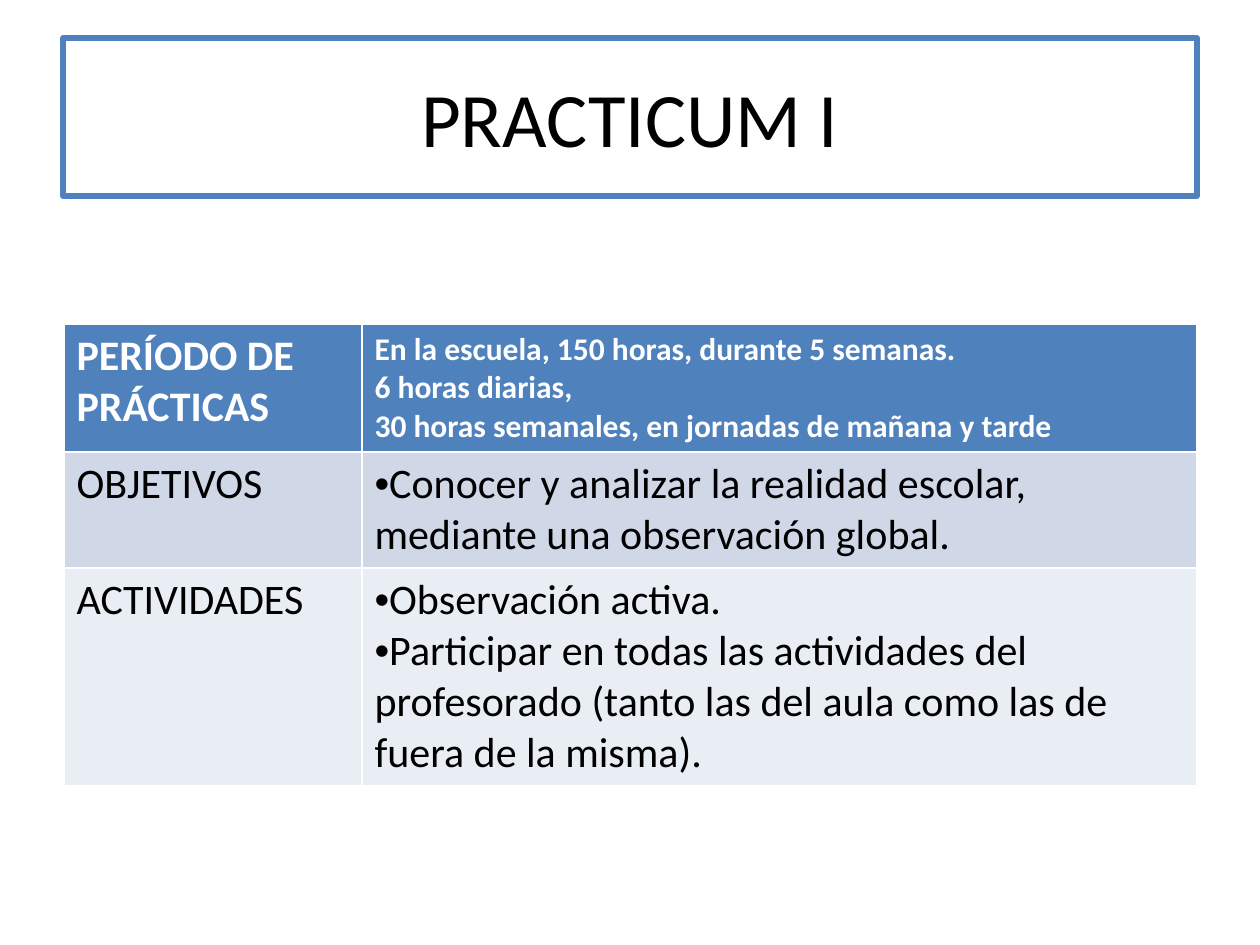
import pptx
import pptx.util
import pptx.dml.color
import pptx.enum.text
import pptx.oxml
import pptx.oxml.ns


def color(value):
    return pptx.dml.color.RGBColor.from_string(value)


def px(n):
    return pptx.util.Emu(round(n * 914400 / 126))


class Deck:
    """Builds slides in one style, with lengths in px."""

    font = "Calibri"
    accent, ink, paper = "4F81BD", "000000", "FFFFFF"
    bands = ("D0D8E8", "E9EDF4")

    def __init__(self, width, height):
        self.prs = pptx.Presentation()
        self.prs.slide_width, self.prs.slide_height = px(width), px(height)
        self.s = self.prs.slides.add_slide(self.prs.slide_layouts[5])

    def style(self, p, size, ink, bold=False):
        p.font.name, p.font.size, p.font.bold = self.font, pptx.util.Pt(size), bold
        p.font.color.rgb = color(ink)

    def bullet(self, p):
        ns = pptx.oxml.ns.nsdecls("a")
        pPr = p._p.get_or_add_pPr()
        pPr.insert(0, pptx.oxml.parse_xml(f'<a:buFont {ns} typeface="Arial"/>'))
        pPr.insert(1, pptx.oxml.parse_xml(f'<a:buChar {ns} char="•"/>'))

    def title(self, text, x, y, w, h):
        sp = self.s.shapes.title
        sp.left, sp.top, sp.width, sp.height = px(x), px(y), px(w), px(h)
        sp.line.color.rgb = color(self.accent)
        sp.line.width = pptx.util.Pt(3)
        tf = sp.text_frame
        tf.text = text
        tf.vertical_anchor = pptx.enum.text.MSO_ANCHOR.MIDDLE
        p = tf.paragraphs[0]
        p.alignment = pptx.enum.text.PP_ALIGN.CENTER
        self.style(p, 44, self.ink)

    def cell(self, cell, text, size, ink, fill, bold=False, bullets=False):
        cell.fill.solid()
        cell.fill.fore_color.rgb = color(fill)
        cell.text_frame.text = text
        for p in cell.text_frame.paragraphs:
            self.style(p, size, ink, bold)
            if bullets:
                self.bullet(p)

    def table(self, rows, x, y, widths, heights):
        frame = self.s.shapes.add_table(
            len(rows), len(widths), px(x), px(y), px(sum(widths)), px(sum(heights)))
        table = frame.table
        for column, width in zip(table.columns, widths):
            column.width = px(width)
        for i, (label, detail) in enumerate(rows):
            table.rows[i].height = px(heights[i])
            head = i == 0
            ink = self.paper if head else self.ink
            fill = self.accent if head else self.bands[(i - 1) % 2]
            self.cell(table.cell(i, 0), label, 24, ink, fill, head)
            self.cell(table.cell(i, 1), detail, 18 if head else 24, ink, fill, head, not head)


def main():
    deck = Deck(1260, 945)
    deck.title("PRACTICUM I", 63, 38, 1134, 158)
    rows = [
        ("PERÍODO DE PRÁCTICAS",
         "En la escuela, 150 horas, durante 5 semanas.\n"
         "6 horas diarias,\n"
         "30 horas semanales, en jornadas de mañana y tarde"),
        ("OBJETIVOS",
         "Conocer y analizar la realidad escolar, mediante una observación global."),
        ("ACTIVIDADES",
         "Observación activa.\n"
         "Participar en todas las actividades del profesorado "
         "(tanto las del aula como las de fuera de la misma)."),
    ]
    deck.table(rows, 64, 324, (298, 835), (127, 116, 217))
    deck.prs.save("out.pptx")


if __name__ == "__main__":
    main()
